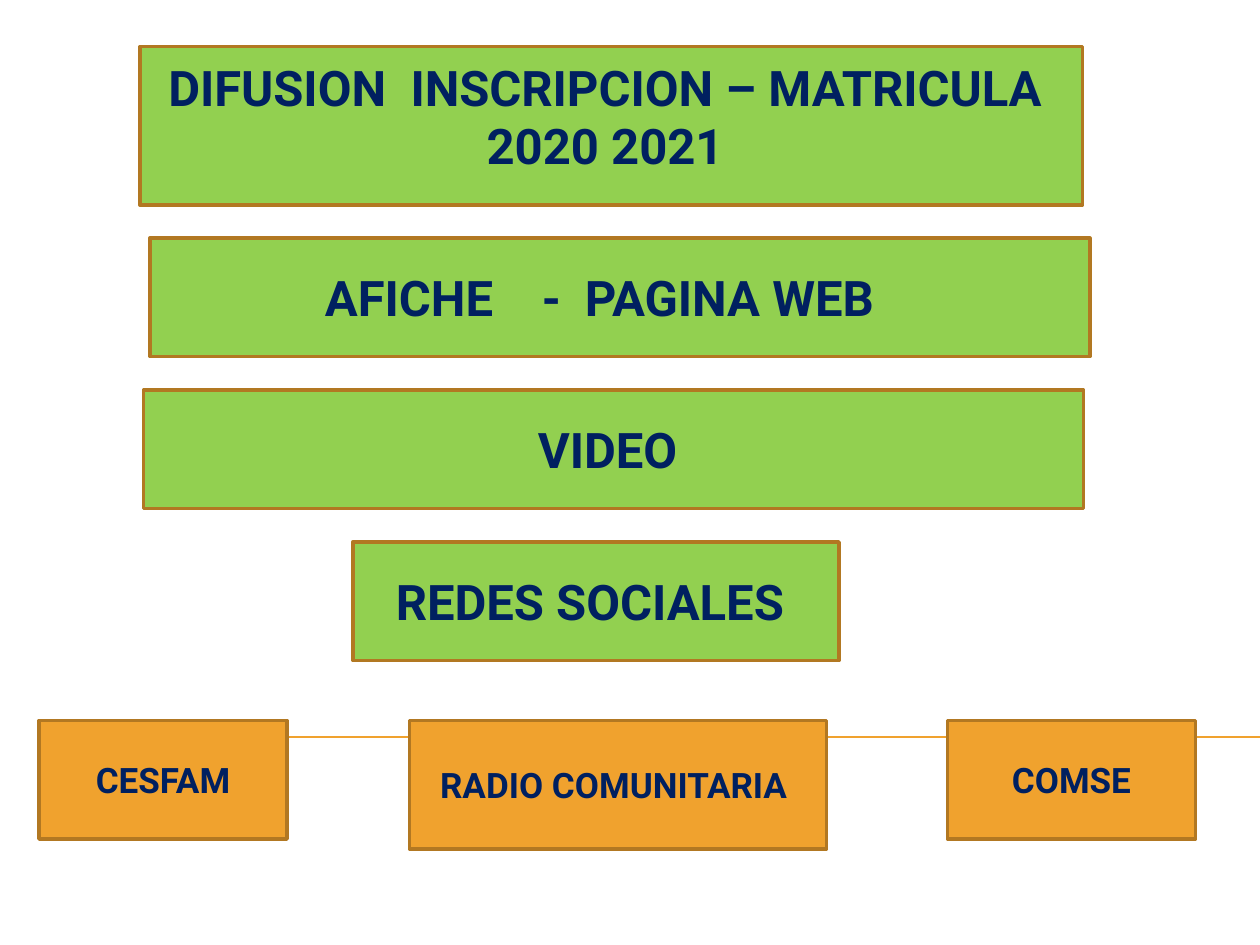
import pptx
import pptx.dml.color
import pptx.enum.shapes
import pptx.enum.text
import pptx.util
from lxml import etree
from pptx.oxml.ns import qn

Pt = pptx.util.Pt
RGBColor = pptx.dml.color.RGBColor
MSO_ANCHOR = pptx.enum.text.MSO_ANCHOR
PP_ALIGN = pptx.enum.text.PP_ALIGN

GREEN = RGBColor(0x92, 0xD0, 0x50)
ORANGE = RGBColor(0xF0, 0xA2, 0x2E)
BROWN = RGBColor(0xB2, 0x78, 0x22)
NAVY = RGBColor(0x00, 0x20, 0x60)


class DiagramPage:
    font = "Roboto"
    border = 2
    margin = 7.2

    def __init__(self, deck):
        self.page = deck.slides.add_slide(deck.slide_layouts[6])

    def line(self, left, right, y):
        connector = self.page.shapes.add_connector(
            pptx.enum.shapes.MSO_CONNECTOR.STRAIGHT, Pt(left), Pt(y), Pt(right), Pt(y))
        connector.line.color.rgb = ORANGE
        connector.line.width = Pt(0.75)
        etree.SubElement(connector._element.spPr, qn("a:effectLst"))

    def box(self, text, left, top, width, height, fill, size, right_margin=margin):
        box = self.page.shapes.add_shape(
            pptx.enum.shapes.MSO_SHAPE.RECTANGLE, Pt(left), Pt(top), Pt(width), Pt(height))
        box.shadow.inherit = False
        box.fill.solid()
        box.fill.fore_color.rgb = fill
        box.line.color.rgb = BROWN
        box.line.width = Pt(self.border)
        frame = box.text_frame
        frame.word_wrap = True
        frame.vertical_anchor = MSO_ANCHOR.MIDDLE
        frame.margin_left = Pt(self.margin)
        frame.margin_right = Pt(right_margin)
        frame.text = text
        for para in frame.paragraphs:
            para.alignment = PP_ALIGN.CENTER
            for span in para.runs:
                span.font.name = self.font
                span.font.size = Pt(size)
                span.font.bold = True
                span.font.color.rgb = NAVY
        return box

    def tabbed_box(self, text, left, top, width, height, fill, size, indent, stops):
        box = self.box(text, left, top, width, height, fill, size)
        box.text_frame.margin_left = Pt(indent)
        para = box.text_frame.paragraphs[0]
        para.alignment = PP_ALIGN.LEFT
        tabs = etree.SubElement(para._p.get_or_add_pPr(), qn("a:tabLst"))
        for stop in stops:
            etree.SubElement(tabs, qn("a:tab"), pos=str(Pt(stop)), algn="l")


def main():
    deck = pptx.Presentation()
    deck.slide_width, deck.slide_height = Pt(720), Pt(540)
    diagram = DiagramPage(deck)
    diagram.line(40.3, 720, 421.2)

    title = diagram.box("DIFUSION  INSCRIPCION – MATRICULA\n2020 2021",
                        79.9, 26.6, 538.6, 90.7, GREEN, 28, right_margin=14)
    title.text_frame.vertical_anchor = MSO_ANCHOR.TOP
    title.text_frame.margin_top = Pt(6)

    bar_top, bar_step, bar_height = 136.1, 86.8, 67.7
    diagram.tabbed_box("AFICHE\t-\tPAGINA WEB", 85.7, bar_top, 537.1, bar_height,
                       GREEN, 28, indent=100, stops=(124, 148.5))
    bars = (("VIDEO", 82.1, 537.1), ("REDES SOCIALES", 201.6, 277.9))
    for row, (text, left, width) in enumerate(bars, start=1):
        diagram.box(text, left, bar_top + row * bar_step, width, bar_height,
                    GREEN, 28, right_margin=14)

    channels = (
        ("CESFAM", 22.3, 141.8, 67.7, 7.2),
        ("RADIO COMUNITARIA", 234, 238.3, 73.4, 12),
        ("COMSE", 541.4, 141.8, 67.7, 7.2),
    )
    for text, left, width, height, right_margin in channels:
        diagram.box(text, left, 411.8, width, height, ORANGE, 20, right_margin)

    deck.save("out.pptx")


if __name__ == "__main__":
    main()
